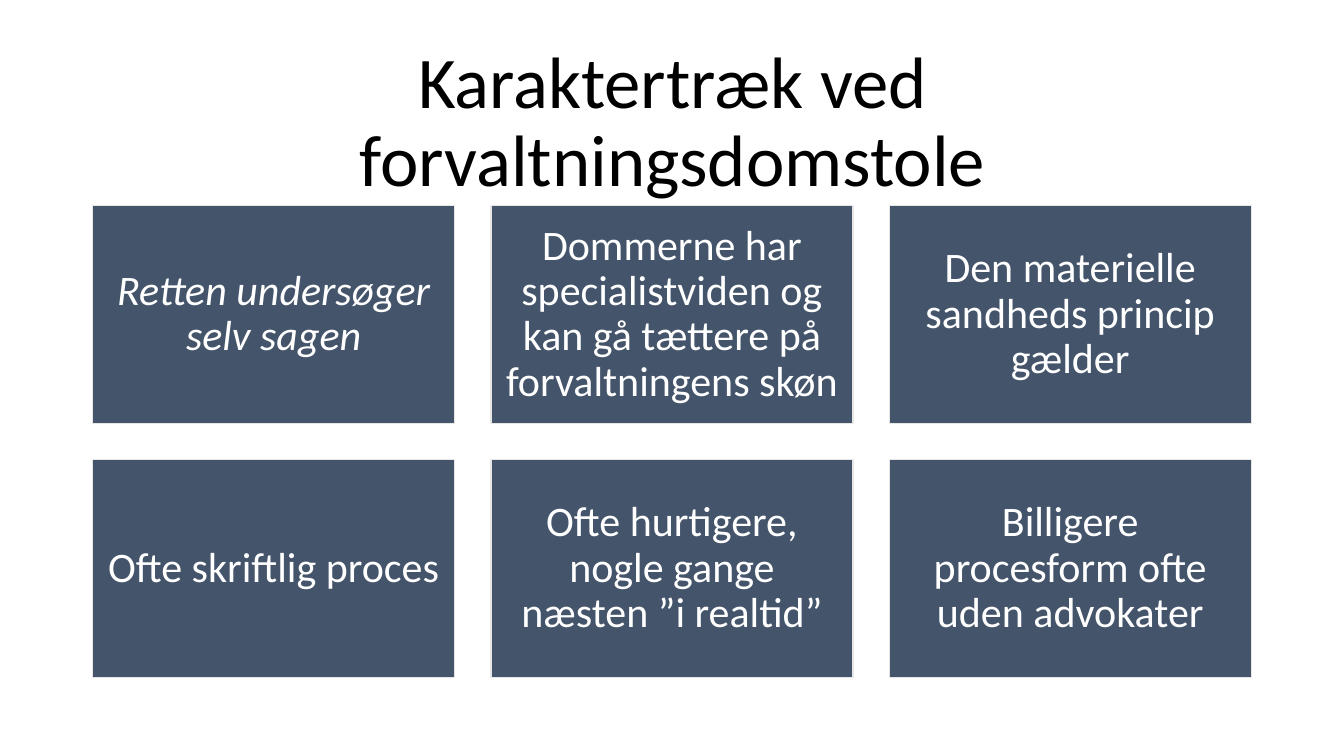
import pptx
import pptx.dml.color
import pptx.enum.shapes
import pptx.enum.text
import pptx.util

Inches = pptx.util.Inches
RGBColor = pptx.dml.color.RGBColor

BLACK = RGBColor(0x00, 0x00, 0x00)
WHITE = RGBColor(0xFF, 0xFF, 0xFF)
SLATE = RGBColor(0x44, 0x54, 0x6A)
PALE_GREY = RGBColor(0xE7, 0xE6, 0xE6)
FONT = "Calibri"

TITLE = "Karaktertræk ved forvaltningsdomstole"
INQUISITORIAL = "Retten undersøger selv sagen"
TRAITS = [
    INQUISITORIAL,
    "Dommerne har specialistviden og kan gå tættere på forvaltningens skøn",
    "Den materielle sandheds princip gælder",
    "Ofte skriftlig proces",
    "Ofte hurtigere, nogle gange næsten ”i realtid”",
    "Billigere procesform ofte uden advokater",
]
COLUMNS = 3
CARD_WIDTH, CARD_HEIGHT = 3.59, 2.16
GAP = 0.36


def write_text(shape, text, size, color, italic=False):
    """Write one centred paragraph into a shape."""
    frame = shape.text_frame
    frame.text = text
    frame.word_wrap = True
    frame.vertical_anchor = pptx.enum.text.MSO_ANCHOR.MIDDLE
    para = frame.paragraphs[0]
    para.alignment = pptx.enum.text.PP_ALIGN.CENTER
    para.line_spacing = 0.9
    font = para.runs[0].font
    font.name = FONT
    font.size = pptx.util.Pt(size)
    font.color.rgb = color
    font.italic = italic


def add_title(page, left, top, width, height):
    """Place the heading in the given box."""
    box = page.shapes.add_textbox(
        Inches(left), Inches(top), Inches(width), Inches(height))
    write_text(box, TITLE, 52, BLACK)


def add_card(page, text, left, top):
    """Place one filled card with its trait."""
    card = page.shapes.add_shape(
        pptx.enum.shapes.MSO_SHAPE.RECTANGLE,
        Inches(left), Inches(top), Inches(CARD_WIDTH), Inches(CARD_HEIGHT))
    card.shadow.inherit = False
    card.fill.solid()
    card.fill.fore_color.rgb = SLATE
    card.line.color.rgb = PALE_GREY
    card.line.width = pptx.util.Pt(1)
    frame = card.text_frame
    frame.margin_left = frame.margin_right = Inches(0.12)
    frame.margin_top = frame.margin_bottom = Inches(0.12)
    write_text(card, text, 30, WHITE, italic=text == INQUISITORIAL)


def add_trait_grid(page, left, top):
    """Lay the traits out row by row from the given corner."""
    for index, trait in enumerate(TRAITS):
        row, column = divmod(index, COLUMNS)
        add_card(page, trait,
                 left + column * (CARD_WIDTH + GAP),
                 top + row * (CARD_HEIGHT + GAP))


def main():
    """Build and save the deck."""
    deck = pptx.Presentation()
    deck.slide_width = Inches(13.33)
    deck.slide_height = Inches(7.5)
    page = deck.slides.add_slide(deck.slide_layouts[6])
    add_title(page, 0.92, 0.61, 11.5, 1.24)
    add_trait_grid(page, 0.92, 2.04)
    deck.save("out.pptx")


if __name__ == "__main__":
    main()
